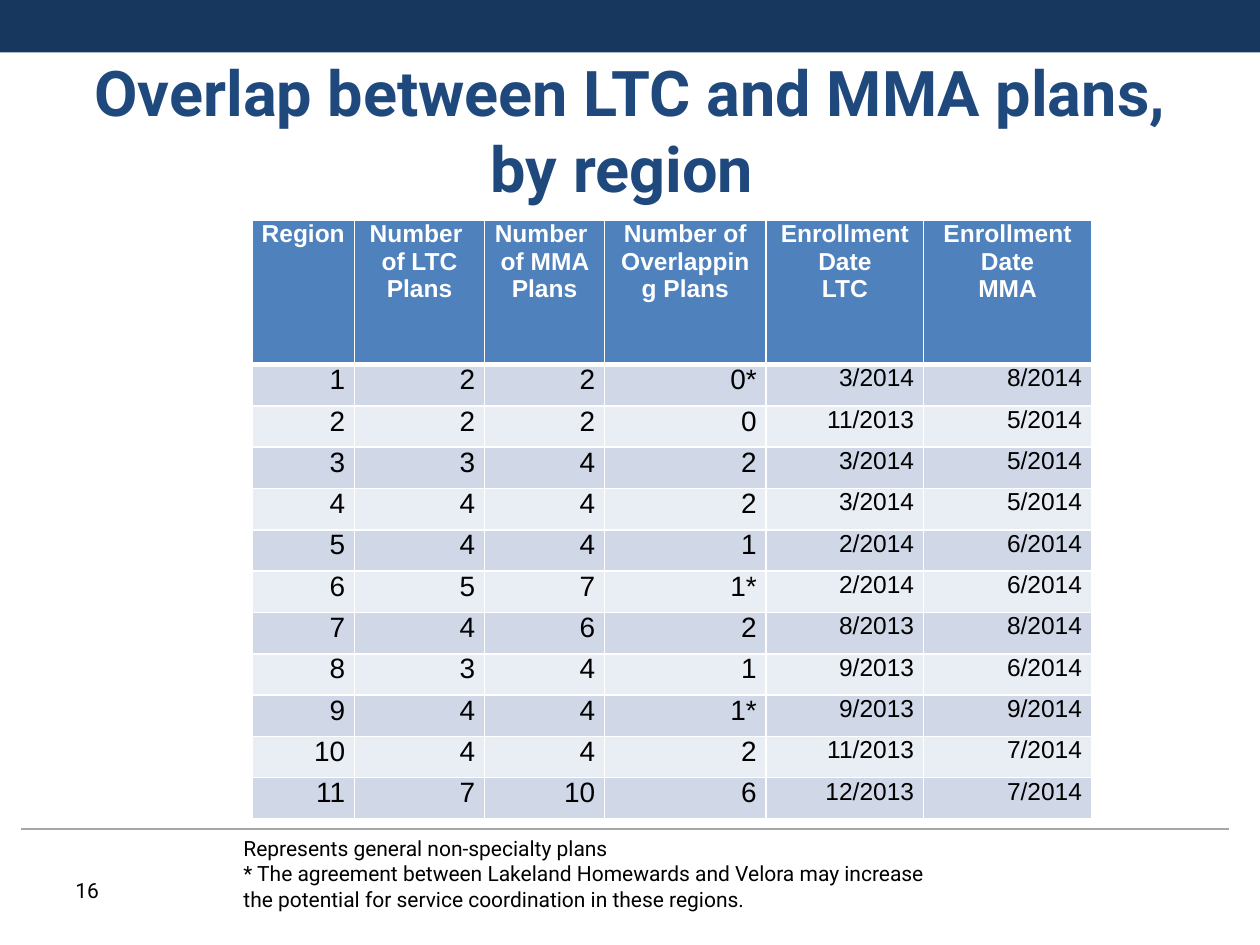
import dataclasses
import typing

import lxml.etree
import pptx
import pptx.dml.color
import pptx.enum.shapes
import pptx.enum.text
import pptx.oxml.ns
import pptx.util

Pt = pptx.util.Pt
Align = pptx.enum.text.PP_ALIGN
Anchor = pptx.enum.text.MSO_ANCHOR
qn = pptx.oxml.ns.qn


@dataclasses.dataclass(frozen=True)
class Theme:
    banner: str = "17375E"
    title: str = "1F497D"
    rule: str = "A6A6A6"
    header: str = "4F81BD"
    odd_row: str = "D0D8E8"
    even_row: str = "E9EDF4"
    light: str = "FFFFFF"
    dark: str = "000000"
    heading_font: str = "Roboto"
    table_font: str = "Arial"
    title_size: float = 36
    count_size: float = 16
    date_size: float = 14
    note_size: float = 12
    grid: float = 1
    header_rule: float = 3


THEME = Theme()


@dataclasses.dataclass(frozen=True)
class Box:
    left: float
    top: float
    width: float
    height: float

    def lengths(self) -> tuple:
        return tuple(Pt(length) for length in dataclasses.astuple(self))


class Column(typing.NamedTuple):
    heading: str
    width: float
    size: float


class Region(typing.NamedTuple):
    number: str
    ltc_plans: str
    mma_plans: str
    overlapping: str
    ltc_date: str
    mma_date: str


COLUMNS = [
    Column("Region", 58.6, THEME.count_size),
    Column("Number \nof LTC Plans", 74.3, THEME.count_size),
    Column("Number \nof MMA Plans", 68.6, THEME.count_size),
    Column("Number of Overlapping Plans", 92.3, THEME.count_size),
    Column("Enrollment Date\nLTC", 90, THEME.date_size),
    Column("Enrollment Date\nMMA", 96, THEME.date_size),
]

REGIONS = [
    Region("1", "2", "2", "0*", "3/2014", "8/2014"),
    Region("2", "2", "2", "0", "11/2013", "5/2014"),
    Region("3", "3", "4", "2", "3/2014", "5/2014"),
    Region("4", "4", "4", "2", "3/2014", "5/2014"),
    Region("5", "4", "4", "1", "2/2014", "6/2014"),
    Region("6", "5", "7", "1*", "2/2014", "6/2014"),
    Region("7", "4", "6", "2", "8/2013", "8/2014"),
    Region("8", "3", "4", "1", "9/2013", "6/2014"),
    Region("9", "4", "4", "1*", "9/2013", "9/2014"),
    Region("10", "4", "4", "2", "11/2013", "7/2014"),
    Region("11", "7", "10", "6", "12/2013", "7/2014"),
]

HEADER_HEIGHT = 82.3
ROW_HEIGHT = 23.64
CELL_INSET = 5.4


def rgb(value: str) -> pptx.dml.color.RGBColor:
    return pptx.dml.color.RGBColor.from_string(value)


def write(frame, text: str, *, size: float = THEME.note_size, font: str = THEME.heading_font,
          color: str = THEME.dark, bold: bool = False, align=Align.LEFT) -> None:
    frame.text = text
    frame.word_wrap = True
    for paragraph in frame.paragraphs:
        paragraph.alignment = align
        for run in paragraph.runs:
            run.font.size = Pt(size)
            run.font.name = font
            run.font.bold = bold
            run.font.color.rgb = rgb(color)


def add_text(slide, box: Box, text: str, anchor=Anchor.TOP, **text_format) -> None:
    frame = slide.shapes.add_textbox(*box.lengths()).text_frame
    frame.vertical_anchor = anchor
    write(frame, text, **text_format)


def add_banner(slide, box: Box) -> None:
    banner = slide.shapes.add_shape(pptx.enum.shapes.MSO_SHAPE.RECTANGLE, *box.lengths())
    banner.shadow.inherit = False
    banner.fill.solid()
    banner.fill.fore_color.rgb = rgb(THEME.banner)
    banner.line.fill.background()


def add_rule(slide, left: float, right: float, top: float) -> None:
    rule = slide.shapes.add_connector(
        pptx.enum.shapes.MSO_CONNECTOR.STRAIGHT, Pt(left), Pt(top), Pt(right), Pt(top))
    rule.line.color.rgb = rgb(THEME.rule)
    rule.line.width = Pt(0.75)
    lxml.etree.SubElement(rule.element.spPr, qn("a:effectLst"))


def style_cell(cell, fill: str, top: float, bottom: float) -> None:
    properties = cell._tc.get_or_add_tcPr()
    widths = {"L": THEME.grid, "R": THEME.grid, "T": top, "B": bottom}
    for side, width in widths.items():
        border = lxml.etree.SubElement(properties, qn(f"a:ln{side}"), w=str(Pt(width)))
        solid = lxml.etree.SubElement(border, qn("a:solidFill"))
        lxml.etree.SubElement(solid, qn("a:srgbClr"), val=THEME.light)
    cell.fill.solid()
    cell.fill.fore_color.rgb = rgb(fill)
    cell.margin_left = cell.margin_right = Pt(CELL_INSET)
    cell.margin_top = cell.margin_bottom = Pt(0)


def add_region_table(slide, left: float, top: float) -> None:
    box = Box(left, top, sum(column.width for column in COLUMNS),
              HEADER_HEIGHT + ROW_HEIGHT * len(REGIONS))
    table = slide.shapes.add_table(len(REGIONS) + 1, len(COLUMNS), *box.lengths()).table
    table.horz_banding = False
    table.rows[0].height = Pt(HEADER_HEIGHT)
    for index, column in enumerate(COLUMNS):
        table.columns[index].width = Pt(column.width)
        heading = table.cell(0, index)
        style_cell(heading, THEME.header, THEME.grid, THEME.header_rule)
        write(heading.text_frame, column.heading, size=THEME.date_size, font=THEME.table_font,
              color=THEME.light, bold=True, align=Align.CENTER)
    for row, region in enumerate(REGIONS, start=1):
        table.rows[row].height = Pt(ROW_HEIGHT)
        fill = THEME.odd_row if row % 2 else THEME.even_row
        top_rule = THEME.header_rule if row == 1 else THEME.grid
        for index, (column, value) in enumerate(zip(COLUMNS, region)):
            cell = table.cell(row, index)
            style_cell(cell, fill, top_rule, THEME.grid)
            write(cell.text_frame, value, size=column.size, font=THEME.table_font,
                  align=Align.RIGHT)


def main() -> None:
    deck = pptx.Presentation()
    deck.slide_width, deck.slide_height = Pt(720), Pt(540)
    slide = deck.slides.add_slide(deck.slide_layouts[6])
    add_banner(slide, Box(0, 0, 720, 30))
    add_rule(slide, 12, 702, 473.7)
    add_text(slide, Box(36, 36, 648, 75.6), "Overlap between LTC and MMA plans, by region ",
             anchor=Anchor.MIDDLE, size=THEME.title_size, color=THEME.title, bold=True,
             align=Align.CENTER)
    add_region_table(slide, 144, 126)
    add_text(slide, Box(36, 498, 90, 28.8), "16")
    add_text(slide, Box(132, 474, 408, 52.5),
             "Represents general non-specialty plans\n"
             "* The agreement between Lakeland Homewards and Velora may increase "
             "the potential for service coordination in these regions.")
    deck.save("out.pptx")


if __name__ == "__main__":
    main()
